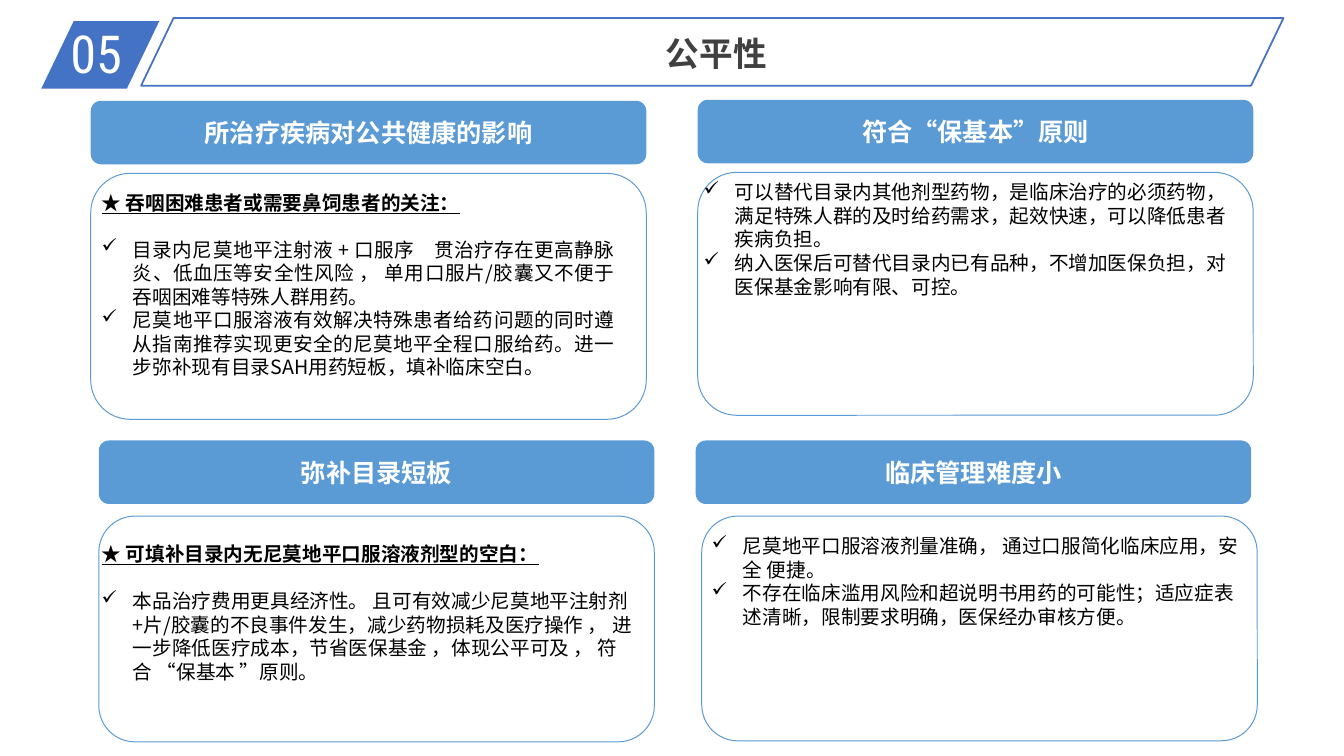
import dataclasses

import lxml.etree
import pptx
import pptx.dml.color
import pptx.enum.shapes
import pptx.enum.text
import pptx.oxml.ns
import pptx.util

Inches = pptx.util.Inches
Pt = pptx.util.Pt
SHAPE = pptx.enum.shapes.MSO_SHAPE
ALIGN = pptx.enum.text.PP_ALIGN
ANCHOR = pptx.enum.text.MSO_ANCHOR
qn = pptx.oxml.ns.qn


@dataclasses.dataclass(frozen=True)
class Theme:
    blue: str = "4472C4"
    sky: str = "5B9BD5"
    white: str = "FFFFFF"
    grey: str = "404040"
    black: str = "000000"
    sans: str = "Noto Sans CJK SC"
    slim: str = "Roboto Condensed"
    badge: float = 37.4
    title: float = 24
    head: float = 18
    body: float = 14
    pitch: float = 16.8


THEME = Theme()
WIDTH = 5.51
INDENT = 0.31

CARDS = [
    dict(
        head=(0.9, 1.0), body=(0.9, 1.72, 2.44), text=(0.91, 1.84, 5.28, 2.1),
        title="所治疗疾病对公共健康的影响",
        lead="★ 吞咽困难患者或需要鼻饲患者的关注：",
        align=ALIGN.JUSTIFY,
        points=[
            "目录内尼莫地平注射液 + 口服序　贯治疗存在更高静脉炎、低血压等安全性风险 ， 单用口服片/胶囊又不便于吞咽困难等特殊人群用药。",
            "尼莫地平口服溶液有效解决特殊患者给药问题的同时遵从指南推荐实现更安全的尼莫地平全程口服给药。进一步弥补现有目录SAH用药短板，填补临床空白。",
        ],
    ),
    dict(
        head=(6.92, 0.99), body=(6.92, 1.71, 2.41), text=(6.88, 1.74, WIDTH, 1.33),
        title="符合“保基本”原则",
        points=[
            "可以替代目录内其他剂型药物，是临床治疗的必须药物，满足特殊人群的及时给药需求，起效快速，可以降低患者疾病负担。",
            "纳入医保后可替代目录内已有品种，不增加医保负担，对医保基金影响有限、可控。",
        ],
    ),
    dict(
        head=(0.98, 4.37), body=(0.98, 5.12, 2.24), text=(0.91, 5.33, WIDTH, 1.51),
        title="弥补目录短板",
        lead="★ 可填补目录内无尼莫地平口服溶液剂型的空白：",
        points=[
            "本品治疗费用更具经济性。 且可有效减少尼莫地平注射剂 +片/胶囊的不良事件发生，减少药物损耗及医疗操作 ， 进一步降低医疗成本，节省医保基金 ，体现公平可及 ， 符合 “保基本 ”原则。",
        ],
    ),
    dict(
        head=(6.9, 4.37), body=(6.96, 5.12, 2.23), text=(6.96, 5.25, WIDTH, 1.04),
        title="临床管理难度小",
        points=[
            "尼莫地平口服溶液剂量准确， 通过口服简化临床应用，安全 便捷。",
            "不存在临床滥用风险和超说明书用药的可能性；适应症表述清晰，限制要求明确，医保经办审核方便。",
        ],
    ),
]


def color(code):
    return pptx.dml.color.RGBColor.from_string(code)


def style(para, size, tint, face=THEME.sans, bold=False, under=False):
    font = para.font
    font.size = Pt(size)
    font.name = face
    font.bold = bold
    font.underline = under
    font.color.rgb = color(tint)
    props = para._p.get_or_add_pPr().find(qn("a:defRPr"))
    east = lxml.etree.Element(qn("a:ea"), typeface=face)
    props.find(qn("a:latin")).addnext(east)


def add_form(slide, kind, box, curve, fill=None, line=None, width=0.72):
    form = slide.shapes.add_shape(kind, *map(Inches, box))
    form.adjustments[0] = curve
    form.shadow.inherit = False
    if fill:
        form.fill.solid()
        form.fill.fore_color.rgb = color(fill)
    else:
        form.fill.background()
    if line:
        form.line.color.rgb = color(line)
        form.line.width = Pt(width)
    else:
        form.line.fill.background()
    return form


def add_text(slide, box):
    frame = slide.shapes.add_textbox(*map(Inches, box)).text_frame
    frame.word_wrap = True
    return frame


def add_check(para):
    props = para._p.get_or_add_pPr()
    props.set("marL", str(Inches(INDENT)))
    props.set("indent", str(-Inches(INDENT)))
    lxml.etree.SubElement(props, qn("a:buChar"), char="✓")


def add_title(slide, text):
    title = slide.shapes.title
    title.left, title.top = Inches(2.95), Inches(0.28)
    title.width, title.height = Inches(8.31), Inches(0.5)
    frame = title.text_frame
    frame.text = text
    frame.auto_size = pptx.enum.text.MSO_AUTO_SIZE.NONE
    frame.vertical_anchor = ANCHOR.MIDDLE
    para = frame.paragraphs[0]
    para.alignment = ALIGN.CENTER
    para.line_spacing = 1.0
    style(para, THEME.title, THEME.grey, bold=True)


def add_badge(slide, text):
    add_form(slide, SHAPE.PARALLELOGRAM, (0.41, 0.21, 1.17, 0.67), 0.48, fill=THEME.blue)
    frame = add_text(slide, (0.6, 0.16, 1.12, 0.73))
    frame.text = text
    style(frame.paragraphs[0], THEME.badge, THEME.white, THEME.slim)


def add_head(slide, spot, text):
    form = add_form(slide, SHAPE.ROUNDED_RECTANGLE, (*spot, WIDTH, 0.63), 0.16, fill=THEME.sky)
    frame = form.text_frame
    frame.text = text
    frame.vertical_anchor = ANCHOR.MIDDLE
    frame.margin_left = frame.margin_right = frame.margin_top = frame.margin_bottom = 0
    para = frame.paragraphs[0]
    para.alignment = ALIGN.CENTER
    style(para, THEME.head, THEME.white, bold=True)


def add_points(slide, box, points, lead=None, align=ALIGN.LEFT):
    frame = add_text(slide, box)
    lines = [lead, *points] if lead else points
    for rank, text in enumerate(lines):
        para = frame.add_paragraph() if rank else frame.paragraphs[0]
        para.text = text
        is_lead = text == lead
        if not is_lead:
            add_check(para)
        para.alignment = align
        para.line_spacing = Pt(THEME.pitch)
        if is_lead:
            para.space_after = Pt(THEME.pitch)
        style(para, THEME.body, THEME.black, bold=is_lead, under=is_lead)


def add_card(slide, head, body, text, title, points, lead=None, align=ALIGN.LEFT):
    add_head(slide, head, title)
    left, top, height = body
    add_form(slide, SHAPE.ROUNDED_RECTANGLE, (left, top, WIDTH, height), 0.16, line=THEME.sky)
    add_points(slide, text, points, lead, align)


def main():
    deck = pptx.Presentation()
    deck.slide_width, deck.slide_height = Inches(13.33), Inches(7.5)
    slide = deck.slides.add_slide(deck.slide_layouts[5])
    add_badge(slide, "05")
    add_title(slide, "公平性")
    add_form(slide, SHAPE.PARALLELOGRAM, (1.4, 0.18, 11.33, 0.67), 0.48, line=THEME.blue, width=1.25)
    for card in CARDS:
        add_card(slide, **card)
    deck.save("out.pptx")


if __name__ == "__main__":
    main()
